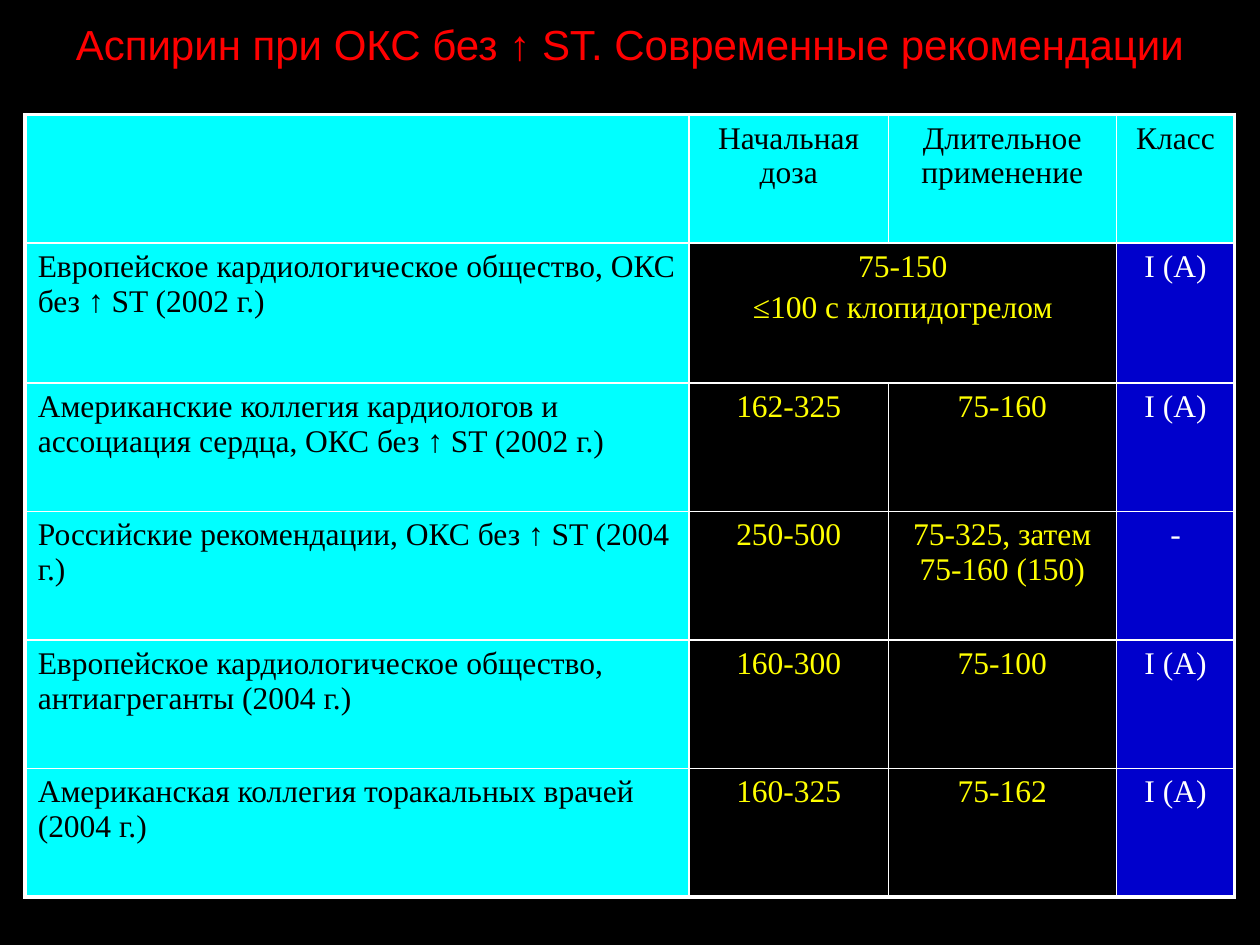
"""Build a slide with a table of aspirin dosing recommendations."""
from lxml.etree import SubElement
from pptx import Presentation
from pptx.dml.color import RGBColor
from pptx.enum.text import MSO_AUTO_SIZE, PP_ALIGN as Align
from pptx.oxml.ns import qn
from pptx.util import Inches, Pt

BLACK = RGBColor(0, 0, 0)
WHITE = RGBColor(255, 255, 255)
CYAN = RGBColor(0, 255, 255)
BLUE = RGBColor(0, 0, 204)
YELLOW = RGBColor(255, 255, 0)
RED = RGBColor(255, 0, 0)

TITLE = "Аспирин при ОКС без ↑ ST. Современные рекомендации"
ROWS = [
    ("", "Начальная доза", "Длительное применение", "Класс"),
    ("Европейское кардиологическое общество, ОКС без ↑ ST (2002 г.)",
     "75-150\n≤100 с клопидогрелом", "", "I (А)"),
    ("Американские коллегия кардиологов и ассоциация сердца, ОКС без ↑ ST (2002 г.)",
     "162-325", "75-160", "I (А)"),
    ("Российские рекомендации, ОКС без ↑ ST (2004 г.)",
     "250-500", "75-325, затем 75-160 (150)", "-"),
    ("Европейское кардиологическое общество, антиагреганты (2004 г.)",
     "160-300", "75-100", "I (А)"),
    ("Американская коллегия торакальных врачей (2004 г.)",
     "160-325", "75-162", "I (А)"),
]
COLUMN_WIDTHS = (5.27, 1.58, 1.81, 0.94)
ROW_HEIGHTS = (1.02, 1.11, 1.02, 1.02, 1.02, 1.02)
BODY_STYLES = ((CYAN, BLACK), (None, YELLOW), (None, YELLOW), (BLUE, WHITE))
OUTER, INNER = Pt(2.25), Pt(1)


def add_span(para, text, font, size, color):
    span = para.add_run()
    span.text = text
    span.font.name = font
    span.font.size = Pt(size)
    span.font.color.rgb = color


def set_space_before(para, percent):
    before = SubElement(para._p.get_or_add_pPr(), qn("a:spcBef"))
    SubElement(before, qn("a:spcPct"), val=str(percent * 1000))


def set_borders(cell, outer_sides):
    properties = cell._tc.get_or_add_tcPr()
    for side, is_outer in outer_sides.items():
        line = SubElement(properties, qn(f"a:ln{side}"), w=str(OUTER if is_outer else INNER))
        fill = SubElement(line, qn("a:solidFill"))
        SubElement(fill, qn("a:srgbClr"), val=str(WHITE))


def fill_cell(cell, text, align, fill, color):
    if fill is None:
        cell.fill.background()
    else:
        cell.fill.solid()
        cell.fill.fore_color.rgb = fill
    frame = cell.text_frame
    for index, line in enumerate(text.split("\n") if text else []):
        para = frame.add_paragraph() if index else frame.paragraphs[0]
        para.alignment = align
        set_space_before(para, 20)
        add_span(para, line, "Times New Roman", 18, color)


def add_title(page):
    box = page.shapes.add_textbox(Inches(0.44), Inches(0.1), Inches(9.12), Inches(0.51))
    frame = box.text_frame
    frame.word_wrap = False
    frame.auto_size = MSO_AUTO_SIZE.SHAPE_TO_FIT_TEXT
    para = frame.paragraphs[0]
    para.alignment = Align.CENTER
    add_span(para, TITLE, "Arial", 24, RED)


def add_dose_table(page):
    last_row, last_column = len(ROWS) - 1, len(COLUMN_WIDTHS) - 1
    table = page.shapes.add_table(
        len(ROWS), len(COLUMN_WIDTHS), Inches(0.2), Inches(0.91),
        Inches(sum(COLUMN_WIDTHS)), Inches(sum(ROW_HEIGHTS))).table
    table.first_row = table.horz_banding = False
    for column, width in zip(table.columns, COLUMN_WIDTHS):
        column.width = Inches(width)
    for row, height in zip(table.rows, ROW_HEIGHTS):
        row.height = Inches(height)
    for r, texts in enumerate(ROWS):
        for c, text in enumerate(texts):
            cell = table.cell(r, c)
            set_borders(cell, {"L": c == 0, "R": c == last_column,
                               "T": r == 0, "B": r == last_row})
            fill, color = BODY_STYLES[c] if r else (CYAN, BLACK)
            fill_cell(cell, text, Align.CENTER if c else Align.LEFT, fill, color)
    table.cell(1, 1).merge(table.cell(1, 2))


def main():
    deck = Presentation()
    deck.slide_width, deck.slide_height = Inches(10), Inches(7.5)
    page = deck.slides.add_slide(deck.slide_layouts[6])
    page.background.fill.solid()
    page.background.fill.fore_color.rgb = BLACK
    add_dose_table(page)
    add_title(page)
    deck.save("out.pptx")


if __name__ == "__main__":
    main()
